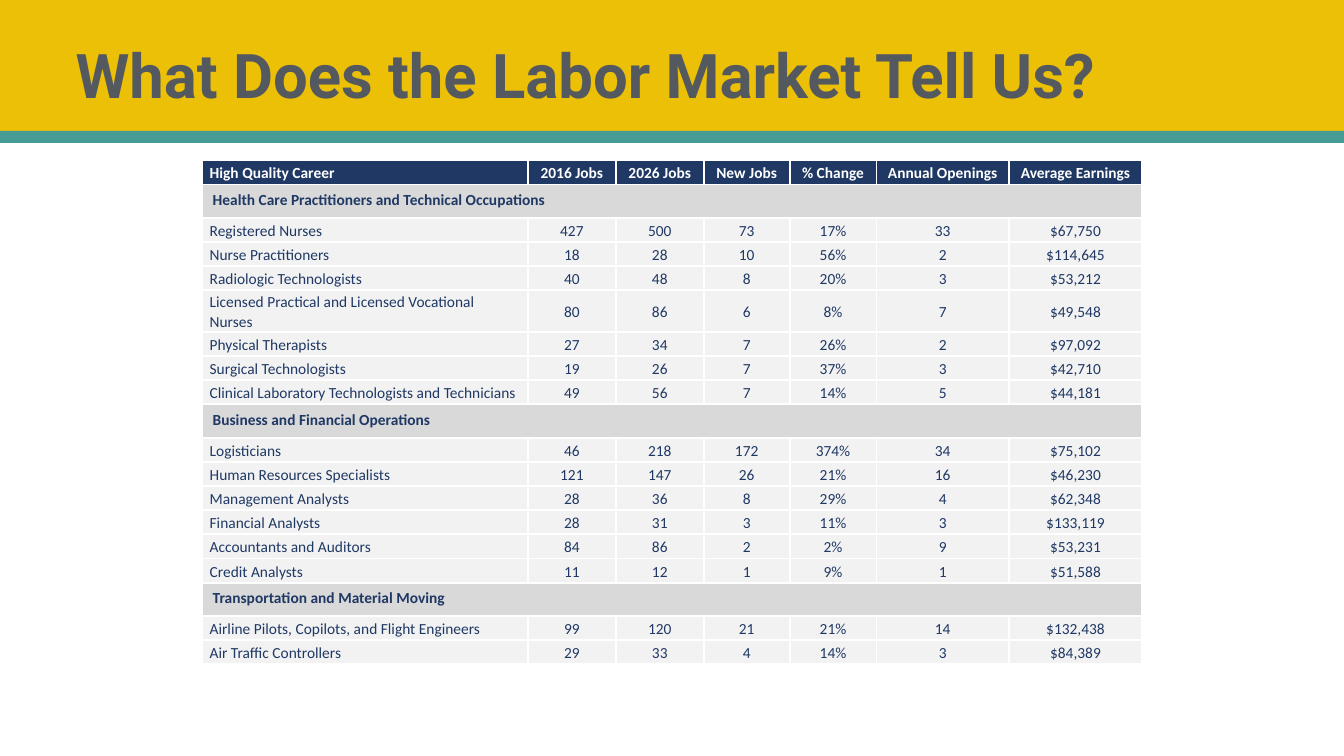
from pptx import Presentation
from pptx.dml.color import RGBColor
from pptx.enum.shapes import MSO_SHAPE
from pptx.enum.text import MSO_ANCHOR, PP_ALIGN
from pptx.oxml import parse_xml
from pptx.oxml.ns import nsdecls
from pptx.util import Inches, Pt

WIDE, HIGH = Inches(13.33), Inches(7.5)
NAVY, WHITE = "1F3864", "FFFFFF"
COLS = [3.23, 0.87, 0.87, 0.85, 0.86, 1.31, 1.32]
HEAD = ["High Quality Career", "2016 Jobs", "2026 Jobs", "New Jobs",
        "% Change", "Annual Openings", "Average Earnings"]
GROUPS = {
    "Health Care Practitioners and Technical Occupations": [
        ["Registered Nurses", "427", "500", "73", "17%", "33", "$67,750"],
        ["Nurse Practitioners", "18", "28", "10", "56%", "2", "$114,645"],
        ["Radiologic Technologists", "40", "48", "8", "20%", "3", "$53,212"],
        ["Licensed Practical and Licensed Vocational Nurses",
         "80", "86", "6", "8%", "7", "$49,548"],
        ["Physical Therapists", "27", "34", "7", "26%", "2", "$97,092"],
        ["Surgical Technologists", "19", "26", "7", "37%", "3", "$42,710"],
        ["Clinical Laboratory Technologists and Technicians",
         "49", "56", "7", "14%", "5", "$44,181"],
    ],
    "Business and Financial Operations": [
        ["Logisticians", "46", "218", "172", "374%", "34", "$75,102"],
        ["Human Resources Specialists", "121", "147", "26", "21%", "16", "$46,230"],
        ["Management Analysts", "28", "36", "8", "29%", "4", "$62,348"],
        ["Financial Analysts", "28", "31", "3", "11%", "3", "$133,119"],
        ["Accountants and Auditors", "84", "86", "2", "2%", "9", "$53,231"],
        ["Credit Analysts", "11", "12", "1", "9%", "1", "$51,588"],
    ],
    "Transportation and Material Moving": [
        ["Airline Pilots, Copilots, and Flight Engineers",
         "99", "120", "21", "21%", "14", "$132,438"],
        ["Air Traffic Controllers", "29", "33", "4", "14%", "3", "$84,389"],
    ],
}


def color(code):
    return RGBColor.from_string(code)


def share(left, top, wide, high):
    return (round(WIDE * left / 100), round(HIGH * top / 100),
            round(WIDE * wide / 100), round(HIGH * high / 100))


def style(para, face, size, code, bold, space):
    para.line_spacing = space
    font = para.font
    font.name, font.size, font.bold = face, Pt(size), bold
    font.color.rgb = color(code)


def band(slide, box, code):
    bar = slide.shapes.add_shape(MSO_SHAPE.RECTANGLE, *box)
    bar.shadow.inherit = False
    bar.fill.solid()
    bar.fill.fore_color.rgb = color(code)
    bar.line.fill.background()


def title(slide, box, text):
    frame = slide.shapes.add_textbox(*box).text_frame
    frame.word_wrap = True
    frame.vertical_anchor = MSO_ANCHOR.MIDDLE
    para = frame.paragraphs[0]
    para.text = text
    style(para, "Roboto", 44, "54595F", True, 0.9)


def edge(cell):
    props = cell._tc.get_or_add_tcPr()
    for side in "LRTB":
        props.append(parse_xml(
            f'<a:ln{side} {nsdecls("a")} w="{Pt(1.5)}"><a:solidFill>'
            f'<a:srgbClr val="{WHITE}"/></a:solidFill></a:ln{side}>'))


def paint(cell, text, fill, code, bold, center, pads):
    edge(cell)
    cell.fill.solid()
    cell.fill.fore_color.rgb = color(fill)
    (cell.margin_left, cell.margin_right,
     cell.margin_top, cell.margin_bottom) = map(Inches, pads)
    para = cell.text_frame.paragraphs[0]
    para.text = text
    para.alignment = PP_ALIGN.CENTER if center else PP_ALIGN.LEFT
    style(para, "Calibri", 11, code, bold, 1.07)


def line(table, row, texts, fill, code, bold):
    for col, text in enumerate(texts):
        cell = table.cell(row, col)
        paint(cell, text, fill, code, bold, col > 0, (0.08, 0.08, 0.01, 0))
        cell.vertical_anchor = MSO_ANCHOR.MIDDLE


def group(table, row, name):
    last = len(COLS) - 1
    for col in range(last + 1):
        paint(table.cell(row, col), name if col == 0 else "", "D9D9D9",
              NAVY, True, False, (0.11, 0.11, 0.05, 0.05))
    table.cell(row, 0).merge(table.cell(row, last))


def jobs(slide, box):
    rows = [HEAD]
    for name, items in GROUPS.items():
        rows += [[name], *items]
    table = slide.shapes.add_table(len(rows), len(COLS), *box).table
    for col, part in zip(table.columns, COLS):
        col.width = round(box[2] * part / sum(COLS))
    parts = [11 if len(texts) == 1 else 8 for texts in rows]
    for row, (texts, part) in enumerate(zip(rows, parts)):
        table.rows[row].height = round(box[3] * part / sum(parts))
        if row == 0:
            line(table, row, texts, NAVY, WHITE, True)
        elif len(texts) == 1:
            group(table, row, texts[0])
        else:
            line(table, row, texts, "F2F2F2", NAVY, False)


def main():
    deck = Presentation()
    deck.slide_width, deck.slide_height = WIDE, HIGH
    slide = deck.slides.add_slide(deck.slide_layouts[6])
    band(slide, share(0, 0, 100, 18.8), "ECC007")
    band(slide, share(0, 17.3, 100, 1.6), "469C95")
    jobs(slide, share(15, 21.2, 70, 64.4))
    title(slide, share(4.88, 0.67, 86.25, 19.33),
          "What Does the Labor Market Tell Us?")
    deck.save("out.pptx")


if __name__ == "__main__":
    main()
